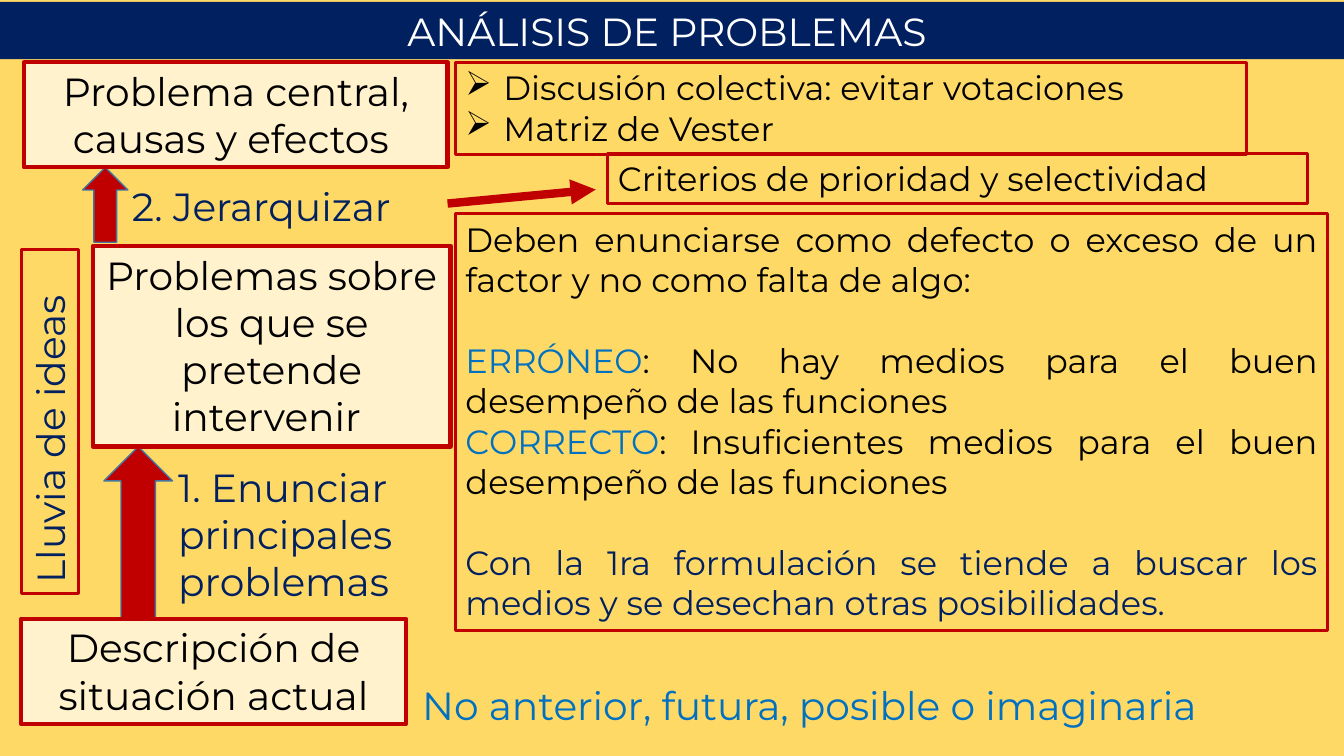
from dataclasses import dataclass
from typing import Optional

from lxml import etree
from pptx import Presentation
from pptx.dml.color import RGBColor
from pptx.enum import shapes, text
from pptx.oxml.ns import qn
from pptx.util import Pt

GOLD = RGBColor(0xFF, 0xD9, 0x66)
CREAM = RGBColor(0xFF, 0xF2, 0xCC)
NAVY = RGBColor(0x00, 0x20, 0x60)
BLUE = RGBColor(0x00, 0x70, 0xC0)
STEEL = RGBColor(0x43, 0x73, 0x9E)
RED = RGBColor(0xC0, 0x00, 0x00)
BLACK = RGBColor(0, 0, 0)
WHITE = RGBColor(0xFF, 0xFF, 0xFF)

FONT = "Montserrat"
LARGE, MEDIUM = 28, 24
THICK, THIN = 3, 2.25
BLANK_LINE = 29
BULLET_INDENT = 27
LEFT, CENTER, JUSTIFY = (text.PP_ALIGN.LEFT, text.PP_ALIGN.CENTER,
                         text.PP_ALIGN.JUSTIFY)


@dataclass(frozen=True)
class Para:
    words: str
    color: RGBColor = BLACK
    lead: str = ""  # opening word, in blue
    space_before: float = 0
    bullet: str = ""


@dataclass(frozen=True)
class Box:
    left: float
    top: float
    width: float
    height: float
    paras: tuple[Para, ...]
    size: float = LARGE
    align: text.PP_ALIGN = LEFT
    fill: Optional[RGBColor] = None
    border: float = 0
    rotation: float = 0


@dataclass(frozen=True)
class UpArrow:
    left: float
    top: float
    width: float
    height: float


UP_ARROWS = (
    UpArrow(74.2, 319, 49, 123),
    UpArrow(59, 119.5, 32.4, 53.5),
)

BOXES = (
    Box(0, 1.4, 960, 41, (Para("ANÁLISIS DE PROBLEMAS ", WHITE),),
        align=CENTER, fill=NAVY),
    # Stages, from bottom to top
    Box(15, 442, 275, 75, (Para("Descripción de situación actual"),),
        align=CENTER, fill=CREAM, border=THICK),
    Box(66.2, 175.7, 255.6, 143.3,
        (Para("Problemas sobre los que se pretende intervenir "),),
        align=CENTER, fill=CREAM, border=THICK),
    Box(17.3, 44.6, 302.4, 75, (Para("Problema central, causas y efectos "),),
        align=CENTER, fill=CREAM, border=THICK),
    # Steps and remarks
    Box(120.2, 327.6, 190, 108.7,
        (Para("1. Enunciar principales problemas", NAVY),)),
    Box(87.1, 126.7, 226.8, 41, (Para("2. Jerarquizar", NAVY),)),
    Box(294.5, 483, 651.6, 41.8,
        (Para("No anterior, futura, posible o imaginaria", BLUE),)),
    Box(-87.1, 280.4, 245.5, 41, (Para("Lluvia de ideas", NAVY),),
        border=THIN, rotation=270),
    # Explanations on the right
    Box(325.4, 152.6, 622.8, 298, (
        Para("Deben enunciarse como defecto o exceso de un factor "
             "y no como falta de algo:"),
        Para(": No hay medios para el buen desempeño de las funciones ",
             lead="ERRÓNEO", space_before=BLANK_LINE),
        Para(": Insuficientes medios para el buen desempeño de las funciones ",
             lead="CORRECTO"),
        Para("Con la 1ra formulación se tiende a buscar los medios "
             "y se desechan otras posibilidades.", NAVY,
             space_before=BLANK_LINE),
    ), size=MEDIUM, align=JUSTIFY, border=THIN),
    Box(434.2, 109.4, 499.7, 36,
        (Para("Criterios de prioridad y selectividad "),),
        size=MEDIUM, align=JUSTIFY, border=THIN),
    Box(325.4, 44.6, 565.2, 65.5, (
        Para("Discusión colectiva: evitar votaciones", bullet="➢"),
        Para("Matriz de Vester ", bullet="➢"),
    ), size=MEDIUM, align=JUSTIFY, border=THIN),
)


def add_bullet(paragraph, symbol: str) -> None:
    properties = paragraph._p.get_or_add_pPr()
    properties.set("marL", str(Pt(BULLET_INDENT)))
    properties.set("indent", str(-Pt(BULLET_INDENT)))
    etree.SubElement(properties, qn("a:buChar")).set("char", symbol)


def write_paragraph(paragraph, para: Para, box: Box) -> None:
    paragraph.alignment = box.align
    paragraph.space_before = Pt(para.space_before)
    if para.bullet:
        add_bullet(paragraph, para.bullet)
    paragraph.font.name = FONT
    paragraph.font.size = Pt(box.size)
    paragraph.font.color.rgb = para.color
    if para.lead:
        span = paragraph.add_run()
        span.text = para.lead
        span.font.color.rgb = BLUE
    paragraph.add_run().text = para.words


def draw_box(page, box: Box) -> None:
    place = [Pt(n) for n in (box.left, box.top, box.width, box.height)]
    if box.fill is None and not box.border:
        shape = page.shapes.add_textbox(*place)
    else:
        shape = page.shapes.add_shape(shapes.MSO_SHAPE.RECTANGLE, *place)
        shape.shadow.inherit = False
        if box.fill is None:
            shape.fill.background()
        else:
            shape.fill.solid()
            shape.fill.fore_color.rgb = box.fill
        if box.border:
            shape.line.color.rgb = RED
            shape.line.width = Pt(box.border)
        else:
            shape.line.fill.background()
    shape.rotation = box.rotation
    frame = shape.text_frame
    frame.word_wrap = True
    frame.vertical_anchor = text.MSO_ANCHOR.TOP
    for index, para in enumerate(box.paras):
        paragraph = frame.add_paragraph() if index else frame.paragraphs[0]
        write_paragraph(paragraph, para, box)


def draw_up_arrow(page, arrow: UpArrow) -> None:
    shape = page.shapes.add_shape(
        shapes.MSO_SHAPE.UP_ARROW, Pt(arrow.left), Pt(arrow.top),
        Pt(arrow.width), Pt(arrow.height))
    shape.shadow.inherit = False
    shape.fill.solid()
    shape.fill.fore_color.rgb = RED
    shape.line.color.rgb = STEEL
    shape.line.width = Pt(1)


def draw_criteria_arrow(page) -> None:
    """Point from the ranking step to its criteria."""
    connector = page.shapes.add_connector(
        shapes.MSO_CONNECTOR.STRAIGHT,
        Pt(319.7), Pt(145.4), Pt(425.5), Pt(135.4))
    connector.line.color.rgb = RED
    connector.line.width = Pt(6)
    line = connector.line._get_or_add_ln()
    etree.SubElement(line, qn("a:tailEnd")).set("type", "triangle")
    etree.SubElement(connector._element.spPr, qn("a:effectLst"))


def main() -> None:
    deck = Presentation()
    deck.slide_width, deck.slide_height = Pt(960), Pt(540)
    page = deck.slides.add_slide(deck.slide_layouts[6])
    page.background.fill.solid()
    page.background.fill.fore_color.rgb = GOLD
    for arrow in UP_ARROWS:
        draw_up_arrow(page, arrow)
    for box in BOXES:
        draw_box(page, box)
    draw_criteria_arrow(page)
    deck.save("out.pptx")


if __name__ == "__main__":
    main()
